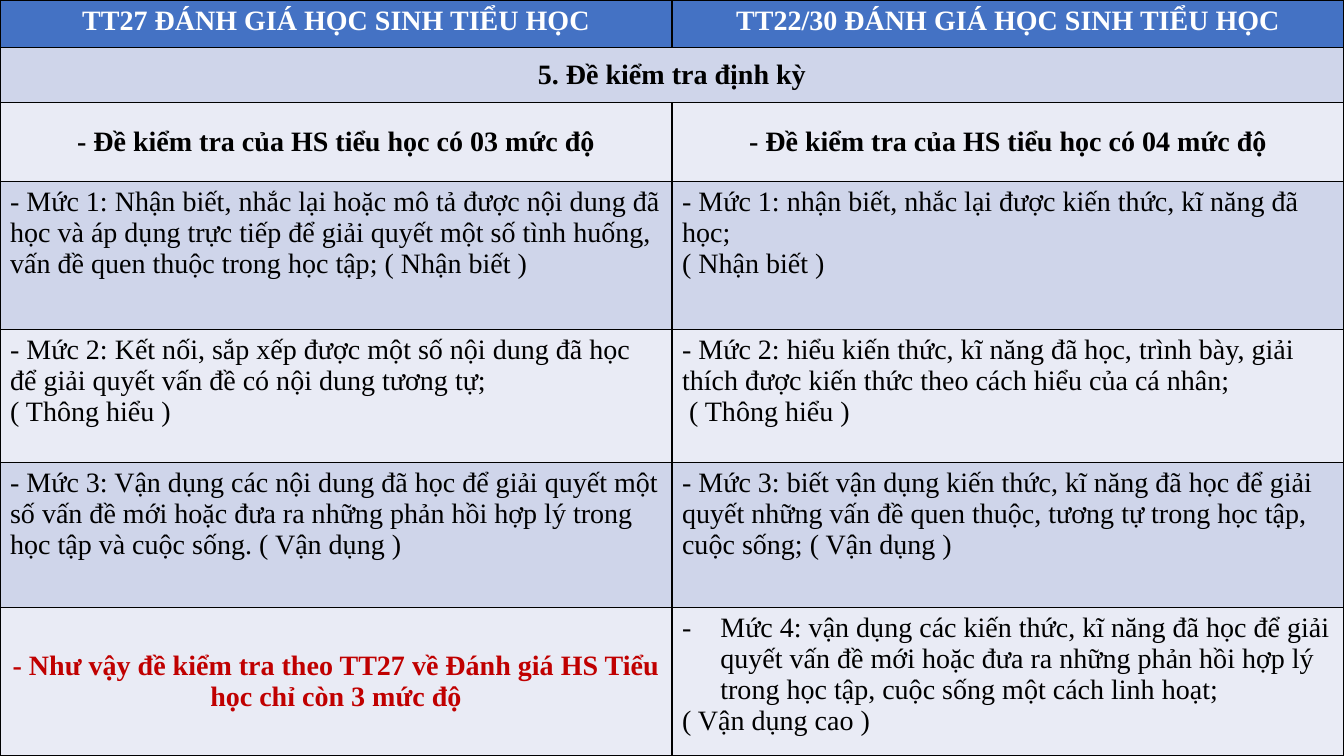
import dataclasses

import lxml.etree
import pptx
import pptx.dml.color
import pptx.enum.text
import pptx.oxml
import pptx.oxml.ns
import pptx.util

CENTER = pptx.enum.text.PP_ALIGN.CENTER
LEFT = pptx.enum.text.PP_ALIGN.LEFT
MIDDLE = pptx.enum.text.MSO_ANCHOR.MIDDLE
TOP = pptx.enum.text.MSO_ANCHOR.TOP


@dataclasses.dataclass(frozen=True)
class Theme:
    font: str = "Times New Roman"
    size: int = 20
    border_width: float = 1
    hanging: float = 0.38
    border: str = "000000"
    ink: str = "000000"
    header_ink: str = "FFFFFF"
    conclusion_ink: str = "C00000"
    header_fill: str = "4472C4"
    bands: tuple = ("E9EBF5", "CFD5EA")


class ComparisonSlide:
    """Draws a full-slide comparison table in one theme."""

    def __init__(self, deck, theme):
        self.deck = deck
        self.theme = theme
        self.slide = deck.slides.add_slide(deck.slide_layouts[6])

    def grid(self, column_count, row_heights):
        width, height = self.deck.slide_width, self.deck.slide_height
        table = self.slide.shapes.add_table(
            len(row_heights), column_count, 0, 0, width, height).table
        for column in table.columns:
            column.width = width // column_count
        for row, share in zip(table.rows, row_heights):
            row.height = int(height * share / sum(row_heights))
        for index, row in enumerate(table.rows):
            fill = self.theme.bands[index % 2] if index else self.theme.header_fill
            for cell in row.cells:
                cell.fill.solid()
                cell.fill.fore_color.rgb = pptx.dml.color.RGBColor.from_string(fill)
                self.outline(cell)
        return table

    def outline(self, cell):
        properties = cell._tc.get_or_add_tcPr()
        width = pptx.util.Pt(self.theme.border_width)
        for position, side in enumerate(("lnL", "lnR", "lnT", "lnB")):
            properties.insert(position, pptx.oxml.parse_xml(
                f'<a:{side} {pptx.oxml.ns.nsdecls("a")} w="{width}"><a:solidFill>'
                f'<a:srgbClr val="{self.theme.border}"/></a:solidFill></a:{side}>'))

    def label(self, cell, text, color, bold=False, align=LEFT, anchor=TOP):
        cell.text_frame.text = text
        cell.vertical_anchor = anchor
        for paragraph in cell.text_frame.paragraphs:
            paragraph.alignment = align
            for run in paragraph.runs:
                run.font.name = self.theme.font
                run.font.size = pptx.util.Pt(self.theme.size)
                run.font.bold = bold
                run.font.color.rgb = pptx.dml.color.RGBColor.from_string(color)

    def dash(self, paragraph):
        properties = paragraph._p.get_or_add_pPr()
        indent = pptx.util.Inches(self.theme.hanging)
        properties.set("marL", str(indent))
        properties.set("indent", str(-indent))
        for tag, name, value in (("a:buFont", "typeface", self.theme.font),
                                 ("a:buChar", "char", "-")):
            lxml.etree.SubElement(properties, pptx.oxml.ns.qn(tag)).set(name, value)


HEADINGS = ("TT27 ĐÁNH GIÁ HỌC SINH TIỂU HỌC", "TT22/30 ĐÁNH GIÁ HỌC SINH TIỂU HỌC")
TOPIC = "5. Đề kiểm tra định kỳ"
SUMMARIES = ("- Đề kiểm tra của HS tiểu học có 03 mức độ",
             "- Đề kiểm tra của HS tiểu học có 04 mức độ")
LEVELS = (
    ("- Mức 1: Nhận biết, nhắc lại hoặc mô tả được nội dung đã học và áp dụng trực tiếp "
     "để giải quyết một số tình huống, vấn đề quen thuộc trong học tập; ( Nhận biết )",
     "- Mức 1: nhận biết, nhắc lại được kiến thức, kĩ năng đã học;\n( Nhận biết )"),
    ("- Mức 2: Kết nối, sắp xếp được một số nội dung đã học để giải quyết vấn đề "
     "có nội dung tương tự;\n( Thông hiểu )",
     "- Mức 2: hiểu kiến thức, kĩ năng đã học, trình bày, giải thích được kiến thức "
     "theo cách hiểu của cá nhân;\n ( Thông hiểu )"),
    ("- Mức 3: Vận dụng các nội dung đã học để giải quyết một số vấn đề mới hoặc đưa ra "
     "những phản hồi hợp lý trong học tập và cuộc sống. ( Vận dụng )",
     "- Mức 3: biết vận dụng kiến thức, kĩ năng đã học để giải quyết những vấn đề "
     "quen thuộc, tương tự trong học tập, cuộc sống; ( Vận dụng )"),
)
CONCLUSION = "- Như vậy đề kiểm tra theo TT27 về Đánh giá HS Tiểu học chỉ còn 3 mức độ"
LEVEL_FOUR = ("Mức 4: vận dụng các kiến thức, kĩ năng đã học để giải quyết vấn đề mới hoặc "
              "đưa ra những phản hồi hợp lý trong học tập, cuộc sống một cách linh hoạt;"
              "\n( Vận dụng cao )")
ROW_HEIGHTS = (0.47, 0.55, 0.78, 1.47, 1.32, 1.44, 1.47)


def main():
    deck = pptx.Presentation()
    deck.slide_width = pptx.util.Inches(13.33)
    deck.slide_height = pptx.util.Inches(7.5)
    theme = Theme()
    page = ComparisonSlide(deck, theme)
    comparison = page.grid(len(HEADINGS), ROW_HEIGHTS)

    comparison.cell(1, 0).merge(comparison.cell(1, 1))
    page.label(comparison.cell(1, 0), TOPIC, theme.ink, True, CENTER, MIDDLE)
    for column, (heading, summary) in enumerate(zip(HEADINGS, SUMMARIES)):
        page.label(comparison.cell(0, column), heading, theme.header_ink, True, CENTER)
        page.label(comparison.cell(2, column), summary, theme.ink, True, CENTER, MIDDLE)
    for row, level in enumerate(LEVELS, start=3):
        for column, description in enumerate(level):
            page.label(comparison.cell(row, column), description, theme.ink)

    conclusion, level_four = comparison.rows[len(ROW_HEIGHTS) - 1].cells
    page.label(conclusion, CONCLUSION, theme.conclusion_ink, True, CENTER, MIDDLE)
    page.label(level_four, LEVEL_FOUR, theme.ink)
    page.dash(level_four.text_frame.paragraphs[0])
    deck.save("out.pptx")


if __name__ == "__main__":
    main()
